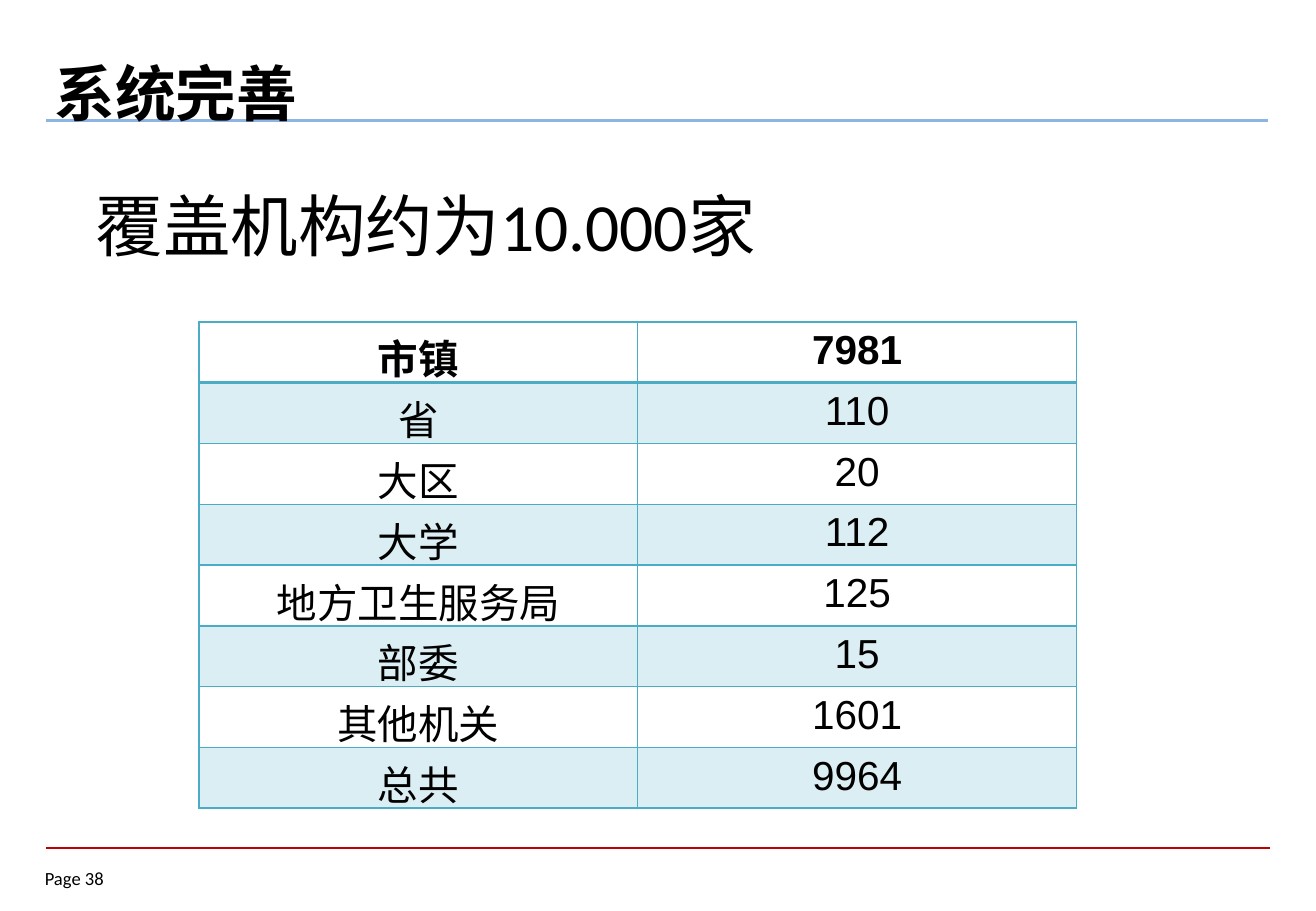
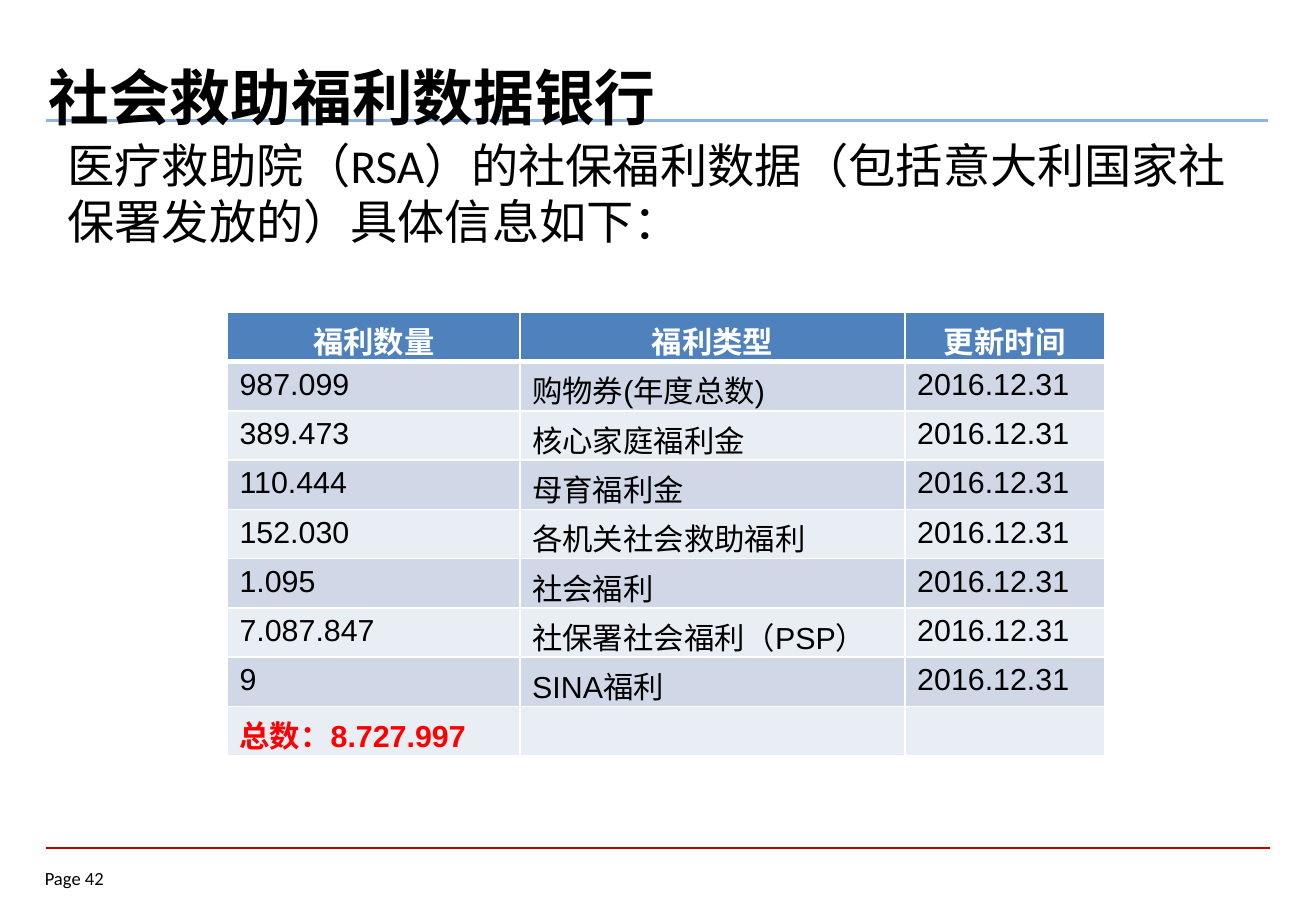
"""Build two slides on welfare data coverage with a shared frame."""
import pptx
import pptx.dml.color
import pptx.enum.shapes
import pptx.enum.text
import pptx.oxml.ns
import pptx.util
from lxml import etree

Pt = pptx.util.Pt
ALIGN = pptx.enum.text.PP_ALIGN
ANCHOR = pptx.enum.text.MSO_ANCHOR
AUTO = pptx.enum.text.MSO_AUTO_SIZE


class Theme:
    """Colours, fonts and type sizes."""
    black, white, red = "000000", "FFFFFF", "FF0000"
    title_rule, footer_rule = "8EB4E3", "C00000"
    teal, header = "4BACC6", "4F81BD"
    bands = ("D0D8E8", "E9EDF4")
    text_font, table_font = "Calibri", "Arial"
    title, lead, body, page = 36, 40, 28, 11
    large_table, small_table = 24, 18


def rgb(value):
    """Turn a hex string into a colour."""
    return pptx.dml.color.RGBColor.from_string(value)


def add_element(parent, tag, **attributes):
    """Append a DrawingML child element."""
    return etree.SubElement(parent, pptx.oxml.ns.qn(tag), attributes)


def apply(target, values):
    """Set every attribute named in values."""
    for name, value in values.items():
        setattr(target, name, value)


class Slides:
    """Hold the deck, its style and the current slide."""

    def __init__(self, theme):
        """Start an empty deck."""
        self.theme = theme
        self.deck = pptx.Presentation()
        apply(self.deck, {"slide_width": Pt(780), "slide_height": Pt(540)})

    def start(self, page):
        """Add a slide with its rules and page label."""
        self.slide = self.deck.slides.add_slide(self.deck.slide_layouts[6])
        self.rule(502.5, 753, self.theme.footer_rule, 1)
        self.rule(71.5, 751.5, self.theme.title_rule, 1.5)
        self.text(f"Page {page}", (26.6, 514, 52.6, 15.8), self.theme.page,
                  margin_left=0, margin_top=0, margin_right=0, margin_bottom=0)

    def rule(self, top, right, colour, width):
        """Draw a horizontal rule from the left edge of the content."""
        line = self.slide.shapes.add_connector(
            pptx.enum.shapes.MSO_CONNECTOR.STRAIGHT,
            Pt(27.4), Pt(top), Pt(right), Pt(top))
        line.line.width = Pt(width)
        line.line.color.rgb = rgb(colour)
        add_element(line._element.spPr, "a:effectLst")

    def span(self, para, text, size, font, colour, bold):
        """Add one formatted run."""
        span = para.add_run()
        span.text = text
        apply(span.font, {"size": Pt(size), "name": font, "bold": bold})
        span.font.color.rgb = rgb(colour)

    def text(self, text, place, size, bold=False, **frame):
        """Add a wrapped text box."""
        box = self.slide.shapes.add_textbox(*map(Pt, place)).text_frame
        apply(box, {"word_wrap": True, **frame})
        self.span(box.paragraphs[0], text, size, self.theme.text_font,
                  self.theme.black, bold)

    def borders(self, cell, colour, widths):
        """Set left, right, top and bottom borders of a cell."""
        properties = cell._tc.get_or_add_tcPr()
        for side, width in zip("LRTB", widths):
            line = add_element(properties, f"a:ln{side}", w=str(Pt(width)))
            fill = add_element(line, "a:solidFill")
            add_element(fill, "a:srgbClr", val=colour)

    def fill(self, cell, colour, alpha=None):
        """Fill a cell, or clear it when no colour is given."""
        if colour is None:
            cell.fill.background()
            return
        cell.fill.solid()
        cell.fill.fore_color.rgb = rgb(colour)
        if alpha:
            for node in cell._tc.tcPr.iter(pptx.oxml.ns.qn("a:srgbClr")):
                if node.getparent().getparent() is cell._tc.tcPr:
                    add_element(node, "a:alpha", val=str(alpha * 1000))

    def table(self, rows, left, top, widths, height, size, border, heavy,
              header_fill, header_colour, bands, alpha=None, centred=False,
              total_colour=None):
        """Add a table with a header row and banded body rows."""
        table = self.slide.shapes.add_table(
            len(rows), len(widths), Pt(left), Pt(top),
            Pt(sum(widths)), Pt(height * len(rows))).table
        for column, width in zip(table.columns, widths):
            column.width = Pt(width)
        for index, values in enumerate(rows):
            table.rows[index].height = Pt(height)
            header = index == 0
            total = bool(total_colour) and index == len(rows) - 1
            colour = (header_colour if header
                      else total_colour if total else self.theme.black)
            edges = (1, 1, heavy if index == 1 else 1, heavy if header else 1)
            for position, value in enumerate(values):
                cell = table.cell(index, position)
                self.borders(cell, border, edges)
                self.fill(cell, header_fill if header
                          else bands[(index - 1) % 2], alpha)
                para = cell.text_frame.paragraphs[0]
                para.alignment = (ALIGN.CENTER if header or centred
                                  else ALIGN.LEFT)
                if value:
                    self.span(para, value, size, self.theme.table_font,
                              colour, header or total)


def main():
    """Build and save the deck."""
    theme = Theme()
    slides = Slides(theme)
    grow = {"auto_size": AUTO.SHAPE_TO_FIT_TEXT}

    slides.start(38)
    slides.text("系统完善", (25.2, 29.5, 244, 51), theme.title, True, **grow)
    slides.text("覆盖机构约为10.000家", (49.7, 105.8, 697.7, 200.9),
                theme.lead, **grow)
    institutions = [
        ("市镇", "7981"), ("省", "110"), ("大区", "20"), ("大学", "112"),
        ("地方卫生服务局", "125"), ("部委", "15"), ("其他机关", "1601"),
        ("总共", "9964")]
    slides.table(institutions, 118, 190.8, (260, 260), 36, theme.large_table,
                 theme.teal, 2, None, theme.black, (theme.teal, None),
                 alpha=20, centred=True)

    slides.start(42)
    slides.text("社会救助福利数据银行", (21.6, 31.7, 714, 51), theme.title,
                True, vertical_anchor=ANCHOR.MIDDLE)
    slides.text("医疗救助院（RSA）的社保福利数据（包括意大利国家社保署发放的）"
                "具体信息如下：", (33, 77, 714, 75), theme.body, **grow)
    benefits = [
        ("987.099", "购物券(年度总数)"), ("389.473", "核心家庭福利金"),
        ("110.444", "母育福利金"), ("152.030", "各机关社会救助福利"),
        ("1.095", "社会福利"), ("7.087.847", "社保署社会福利（PSP）"),
        ("9", "SINA福利")]
    rows = [("福利数量", "福利类型", "更新时间"),
            *((*benefit, "2016.12.31") for benefit in benefits),
            ("总数：8.727.997", "", "")]
    slides.table(rows, 134.8, 185.2, (173.5, 228.2, 118.1), 29.2,
                 theme.small_table, theme.white, 3, theme.header, theme.white,
                 theme.bands, total_colour=theme.red)
    slides.deck.save("out.pptx")


if __name__ == "__main__":
    main()
